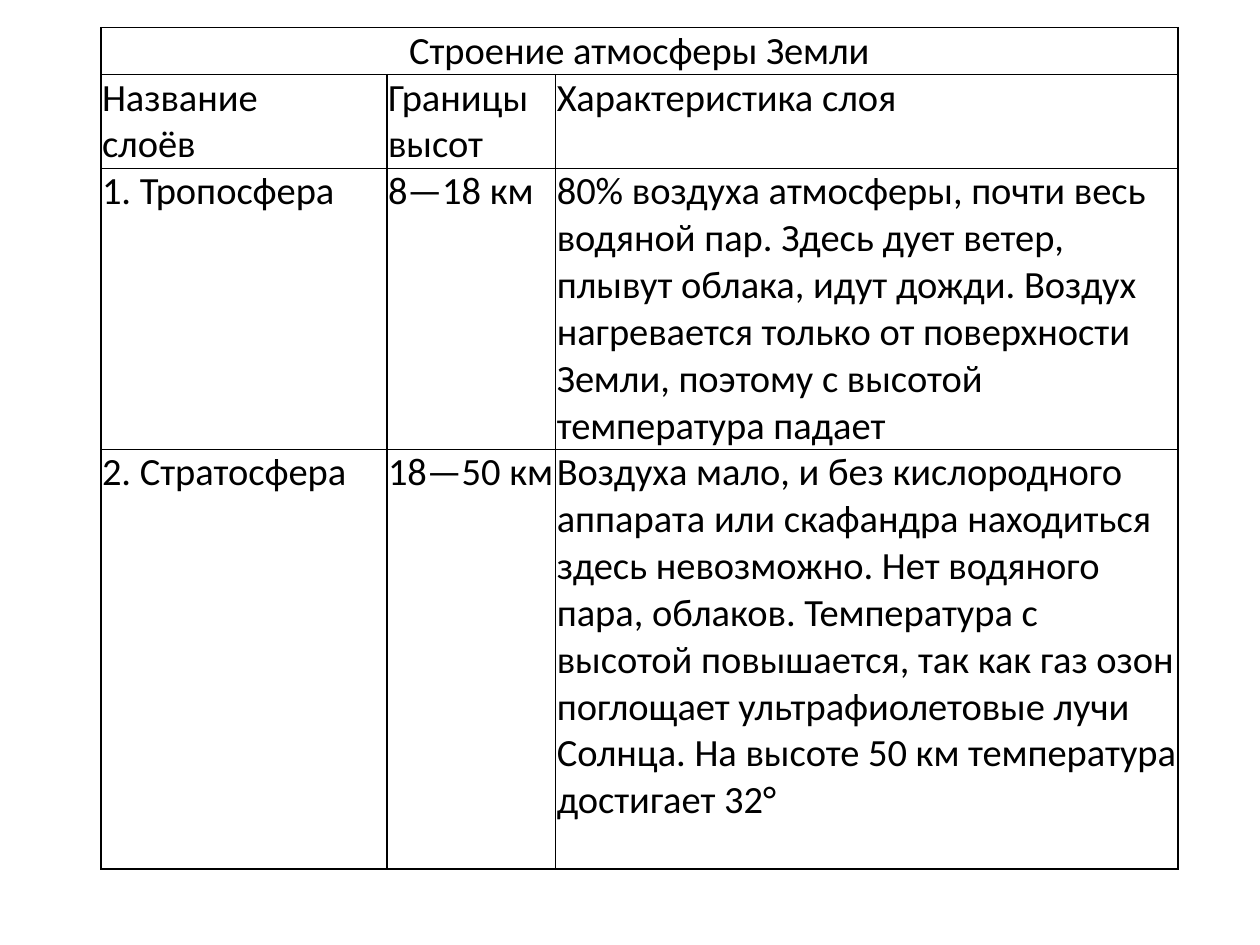
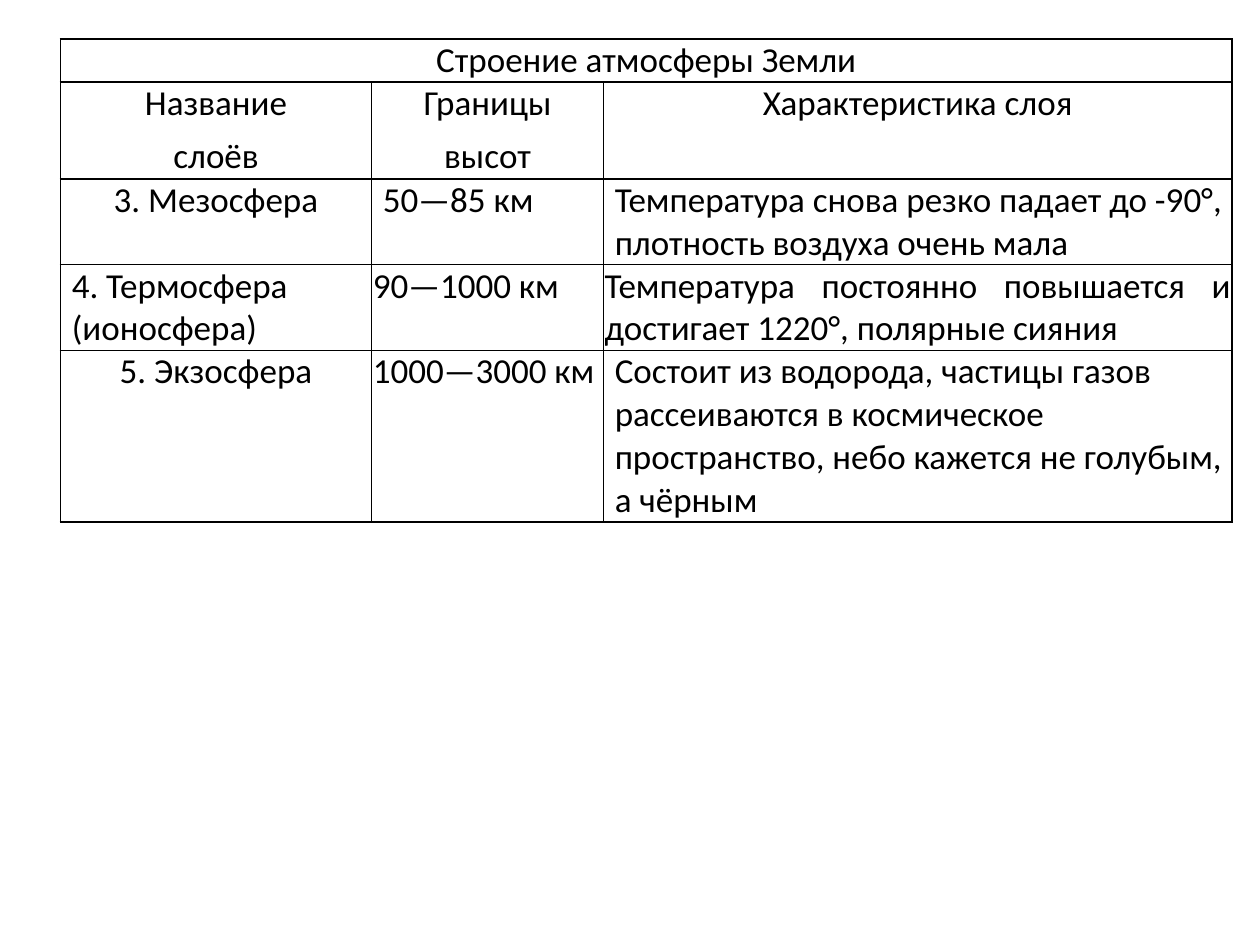
import pptx
import pptx.util
import pptx.dml.color
import pptx.enum.text
import pptx.oxml
import pptx.oxml.ns
from dataclasses import dataclass

Inches = pptx.util.Inches
Pt = pptx.util.Pt
Align = pptx.enum.text.PP_ALIGN


@dataclass(frozen=True)
class Theme:
    font: str = "Calibri"
    ink: str = "000000"
    rule: float = 1
    pad: float = 0.01
    large: int = 22
    small: int = 20


theme = Theme()
title = "Строение атмосферы Земли"
heads = ("Название\nслоёв", "Границы\nвысот", "Характеристика слоя")

left = {}
mid = {"align": Align.CENTER}
just = {"align": Align.JUSTIFY}
inset = {"indent": 0.08}

tables = [
    {
        "at": (0.8, 0.22), "size": theme.large, "before": 0, "head": left,
        "cols": (2.27, 1.34, 4.94), "rows": (0.37, 0.74, 2.23, 3.33),
        "layers": [
            [("1. Тропосфера", left), ("8—18 км", left),
             ("80% воздуха атмосферы, почти весь водяной пар. Здесь дует ветер, "
              "плывут облака, идут дожди. Воздух нагревается только от поверхности "
              "Земли, поэтому с высотой температура падает", left)],
            [("2. Стратосфера", left), ("18—50 км", left),
             ("Воздуха мало, и без кислородного аппарата или скафандра находиться "
              "здесь невозможно. Нет водяного пара, облаков. Температура с высотой "
              "повышается, так как газ озон поглощает ультрафиолетовые лучи Солнца. "
              "На высоте 50 км температура достигает 32°", left)],
        ],
    },
    {
        "at": (0.48, 0.31), "size": theme.small, "before": 6, "head": mid,
        "cols": (2.47, 1.84, 4.99), "rows": (0.34, 0.77, 0.68, 0.68, 1.36),
        "layers": [
            [("3. Мезосфера", mid), ("50—85 км", inset),
             ("Температура снова резко падает до -90°, плотность воздуха "
              "очень мала", inset)],
            [("4. Термосфера (ионосфера)", inset), ("90—1000 км", left),
             ("Температура постоянно повышается и достигает 1220°, "
              "полярные сияния", just)],
            [("5. Экзосфера", mid), ("1000—3000 км", left),
             ("Состоит из водорода, частицы газов рассеиваются в космическое "
              "пространство, небо кажется не голубым, а чёрным", inset)],
        ],
    },
]


def write(frame, text, size, before=0, align=Align.LEFT, indent=0):
    frame.word_wrap = True
    for num, line in enumerate(text.split("\n")):
        para = frame.paragraphs[0] if num == 0 else frame.add_paragraph()
        para.alignment = align
        para.space_before = Pt(before)
        if indent:
            para._p.get_or_add_pPr().set("marL", str(Inches(indent)))
        run = para.add_run()
        run.text = line
        run.font.name = theme.font
        run.font.size = Pt(size)
        run.font.bold = False
        run.font.color.rgb = pptx.dml.color.RGBColor.from_string(theme.ink)


def border(cell):
    props = cell._tc.get_or_add_tcPr()
    for num, side in enumerate(("lnL", "lnR", "lnT", "lnB")):
        props.insert(num, pptx.oxml.parse_xml(
            f'<a:{side} {pptx.oxml.ns.nsdecls("a")} w="{Pt(theme.rule)}">'
            f'<a:solidFill><a:srgbClr val="{theme.ink}"/></a:solidFill></a:{side}>'))


def build(slide, data):
    cols, rows = data["cols"], data["rows"]
    box = [Inches(n) for n in (*data["at"], sum(cols), sum(rows))]
    grid = slide.shapes.add_table(len(rows), len(cols), *box).table
    grid.first_row = grid.horz_banding = False
    for col, width in zip(grid.columns, cols):
        col.width = Inches(width)
    for row, height in zip(grid.rows, rows):
        row.height = Inches(height)
    for cell in grid.iter_cells():
        cell.margin_left = cell.margin_right = Inches(theme.pad)
        cell.margin_top = cell.margin_bottom = 0
        cell.fill.background()
        border(cell)
    grid.cell(0, 0).merge(grid.cell(0, len(cols) - 1))
    lines = [[(title, mid)], [(head, data["head"]) for head in heads], *data["layers"]]
    for r, line in enumerate(lines):
        for c, (text, style) in enumerate(line):
            write(grid.cell(r, c).text_frame, text, data["size"], data["before"], **style)


def main():
    deck = pptx.Presentation()
    deck.slide_width, deck.slide_height = Inches(10), Inches(7.5)
    for data in tables:
        build(deck.slides.add_slide(deck.slide_layouts[6]), data)
    deck.save("out.pptx")


if __name__ == "__main__":
    main()
